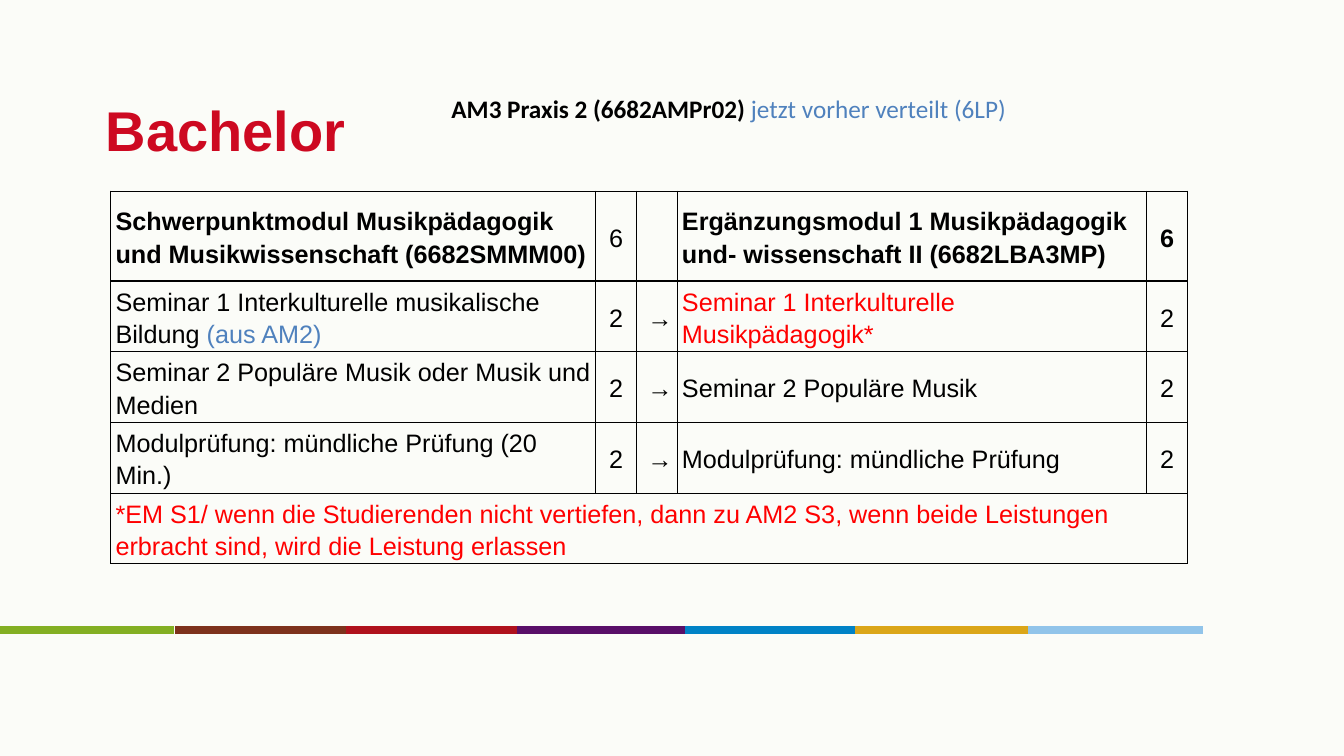
from lxml import etree
from pptx import Presentation
from pptx.dml.color import RGBColor
from pptx.enum.shapes import MSO_CONNECTOR
from pptx.enum.text import MSO_ANCHOR, MSO_AUTO_SIZE, PP_ALIGN
from pptx.oxml.ns import qn
from pptx.util import Pt

STRAIGHT = MSO_CONNECTOR.STRAIGHT
MIDDLE = MSO_ANCHOR.MIDDLE
NO_AUTOFIT = MSO_AUTO_SIZE.NONE
LEFT, CENTER, RIGHT = PP_ALIGN.LEFT, PP_ALIGN.CENTER, PP_ALIGN.RIGHT

COLORS = {"paper": "FBFCF8", "title": "CD0921", "black": "000000",
          "blue": "4F81BD", "red": "FF0000"}

# Content: each text is a list of (words, colour, bold) runs
TITLE = [("Bachelor", "title", True)]
MODULE_NOTE = [("AM3 Praxis 2 (6682AMPr02) ", "black", True),
               ("jetzt vorher verteilt (6LP)", "blue", False)]


def plain(words, color="black", bold=False):
    return [(words, color, bold)]


ARROW = plain("→")
MODULE_ROWS = [
    [plain("Schwerpunktmodul Musikpädagogik und Musikwissenschaft (6682SMMM00)", bold=True),
     plain("6"), plain(""),
     plain("Ergänzungsmodul 1 Musikpädagogik und- wissenschaft II (6682LBA3MP)", bold=True),
     plain("6", bold=True)],
    [[("Seminar 1 Interkulturelle musikalische Bildung ", "black", False),
      ("(aus AM2)", "blue", False)],
     plain("2"), ARROW,
     plain("Seminar 1 Interkulturelle Musikpädagogik*", "red"), plain("2")],
    [plain("Seminar 2 Populäre Musik oder Musik und Medien"), plain("2"), ARROW,
     plain("Seminar 2 Populäre Musik"), plain("2")],
    [plain("Modulprüfung: mündliche Prüfung (20 Min.)"), plain("2"), ARROW,
     plain("Modulprüfung: mündliche Prüfung"), plain("2")],
    [plain("*EM S1/ wenn die Studierenden nicht vertiefen, dann zu AM2 S3, "
           "wenn beide Leistungen erbracht sind, wird die Leistung erlassen", "red")],
]
COLUMN_WIDTHS = [346.2, 29.3, 29.1, 335.2, 29.3]
COLUMN_ALIGNMENTS = [LEFT, CENTER, RIGHT, LEFT, CENTER]
ROW_HEIGHTS = [64.2] + [50.5] * 4

# Colour bar: (left, colour) of each stripe
STRIPES = [(0, "83AF23"), (125.3, "7D321D"), (247, "AF111D"), (369.4, "590F68"),
           (489.6, "0082C6"), (610.6, "DBA619"), (734.4, "91C4EA")]
STRIPE_WIDTH, STRIPE_Y = 124.6, 450

TITLE_FORMAT = {"name": "Arial", "size": Pt(40)}
NOTE_FORMAT = {"name": "Calibri", "size": Pt(18)}
CELL_FORMAT = {"name": "Arial", "size": Pt(18)}
TITLE_MARGINS = {"margin_left": Pt(3.6), "margin_right": Pt(3.6),
                 "margin_top": Pt(3.6), "margin_bottom": Pt(3.6)}
CELL_MARGINS = {"margin_left": Pt(3.4), "margin_right": Pt(3.4),
                "margin_top": 0, "margin_bottom": 0}


def rgb(color):
    return RGBColor.from_string(COLORS.get(color, color))


def apply(target, values):
    for name, value in values.items():
        setattr(target, name, value)


def write(paragraph, runs, font_format, alignment=LEFT):
    paragraph.alignment = alignment
    for words, color, bold in runs:
        if not words:
            apply(paragraph.font, font_format)
            continue
        run = paragraph.add_run()
        run.text = words
        apply(run.font, {**font_format, "bold": bold})
        run.font.color.rgb = rgb(color)


def add_borders(cell):
    properties = cell._tc.get_or_add_tcPr()
    for position, side in enumerate(("a:lnL", "a:lnR", "a:lnT", "a:lnB")):
        border = etree.Element(qn(side), w=str(Pt(1)))
        fill = etree.SubElement(border, qn("a:solidFill"))
        etree.SubElement(fill, qn("a:srgbClr"), val=COLORS["black"])
        properties.insert(position, border)


prs = Presentation()
prs.slide_width, prs.slide_height = Pt(960), Pt(540)
slide = prs.slides.add_slide(prs.slide_layouts[5])
slide.background.fill.solid()
slide.background.fill.fore_color.rgb = rgb("paper")

# Colour bar
for left, color in STRIPES:
    stripe = slide.shapes.add_connector(
        STRAIGHT, Pt(left), Pt(STRIPE_Y), Pt(left + STRIPE_WIDTH), Pt(STRIPE_Y))
    stripe.line.color.rgb = rgb(color)
    stripe.line.width = Pt(5.5)
    etree.SubElement(stripe._element.spPr, qn("a:effectLst"))

# Title
title = slide.shapes.title
apply(title, {"left": Pt(72), "top": Pt(47), "width": Pt(816), "height": Pt(90)})
apply(title.text_frame, {**TITLE_MARGINS, "vertical_anchor": MIDDLE,
                         "auto_size": NO_AUTOFIT})
write(title.text_frame.paragraphs[0], TITLE, TITLE_FORMAT)

# Module note beside the title
note = slide.shapes.add_textbox(Pt(315.4), Pt(62.8), Pt(480), Pt(29))
note.text_frame.word_wrap = True
write(note.text_frame.paragraphs[0], MODULE_NOTE, NOTE_FORMAT)

# Module comparison table
modules = slide.shapes.add_table(
    len(MODULE_ROWS), len(COLUMN_WIDTHS), Pt(79.2), Pt(136.6),
    Pt(sum(COLUMN_WIDTHS)), Pt(sum(ROW_HEIGHTS))).table
apply(modules, {"first_row": False, "horz_banding": False})
for column, width in zip(modules.columns, COLUMN_WIDTHS):
    column.width = Pt(width)
for row, height in zip(modules.rows, ROW_HEIGHTS):
    row.height = Pt(height)
for cell in modules.iter_cells():
    cell.fill.background()
    apply(cell, {**CELL_MARGINS, "vertical_anchor": MIDDLE})
    add_borders(cell)
for row_index, row_texts in enumerate(MODULE_ROWS):
    for column_index, runs in enumerate(row_texts):
        paragraph = modules.cell(row_index, column_index).text_frame.paragraphs[0]
        paragraph.line_spacing = 1.15
        write(paragraph, runs, CELL_FORMAT, COLUMN_ALIGNMENTS[column_index])
footnote_row = len(MODULE_ROWS) - 1
modules.cell(footnote_row, 0).merge(modules.cell(footnote_row, len(COLUMN_WIDTHS) - 1))

prs.save("out.pptx")
